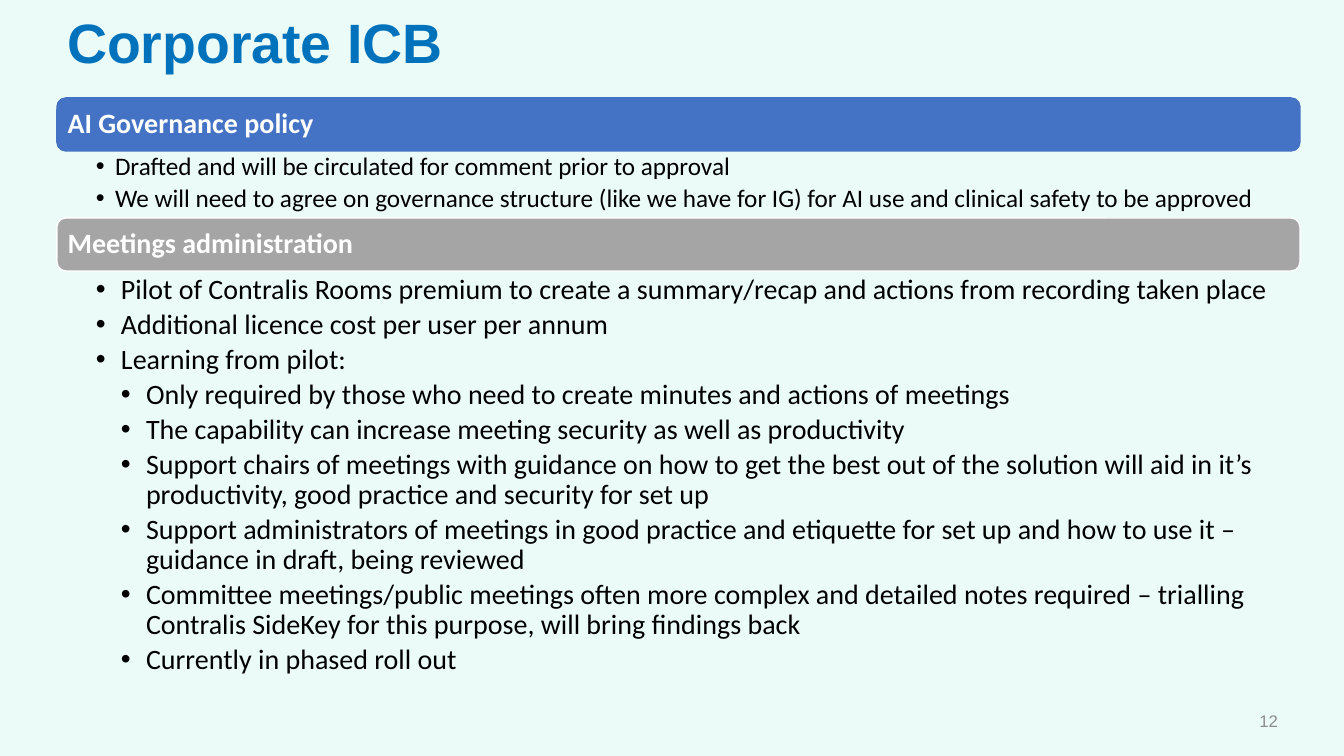
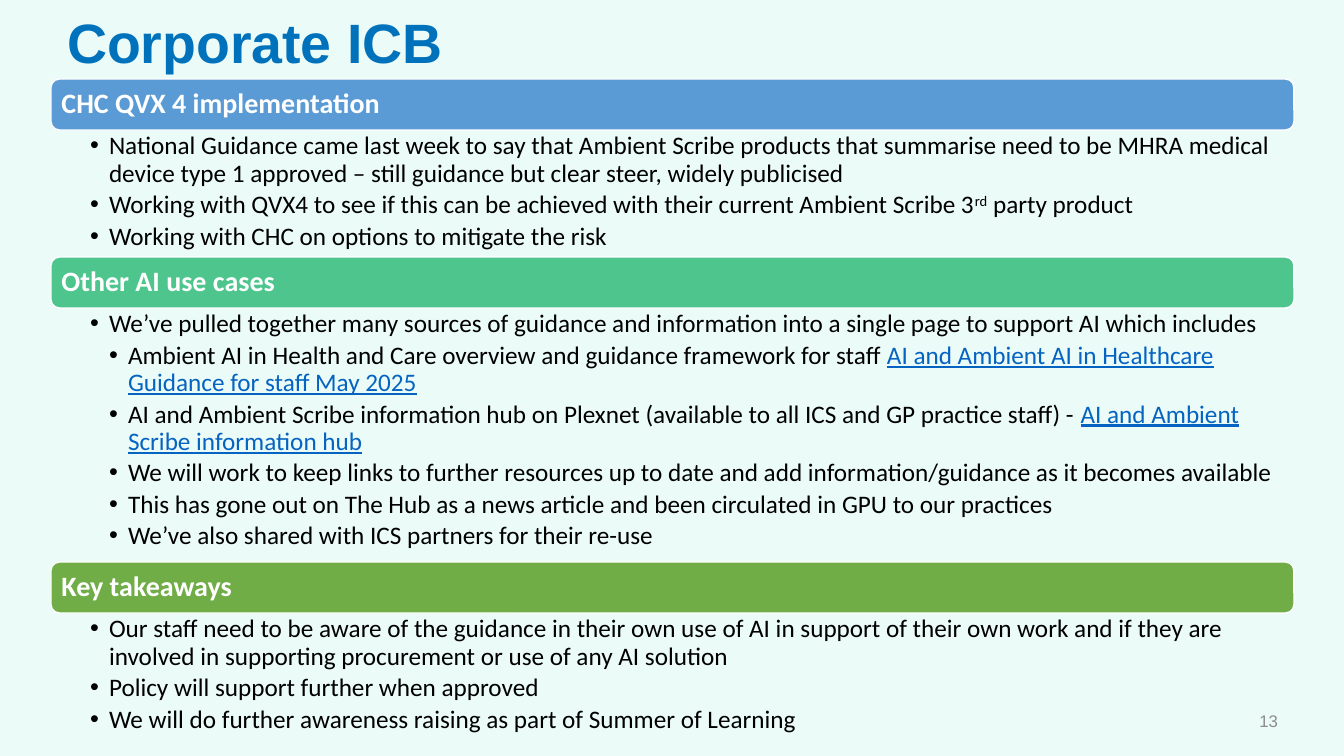
from dataclasses import dataclass

from lxml.etree import SubElement
from pptx import Presentation
from pptx.dml.color import RGBColor
from pptx.enum.shapes import MSO_SHAPE
from pptx.enum.text import MSO_ANCHOR, MSO_AUTO_SIZE, PP_ALIGN
from pptx.oxml.ns import qn
from pptx.util import Emu, Pt

# Scale and shared look
SLIDE_W, SLIDE_H = 1344, 756
EMU_PER_PX = 12192000 / SLIDE_W
BAND_W = 1243
LINE_SPACING = 0.9
GAP_RATIO = 0.17
COMPARISON_LAYOUT = 4

HEADING_FONT = "Arial"
BODY_FONT = "Calibri"

BACKGROUND = RGBColor(0xEB, 0xFB, 0xF8)
TITLE_BLUE = RGBColor(0x00, 0x72, 0xBC)
NUMBER_GREY = RGBColor(0x8C, 0x8C, 0x8C)
LINK_BLUE = RGBColor(0x05, 0x63, 0xC1)
BLACK = RGBColor(0x00, 0x00, 0x00)
WHITE = RGBColor(0xFF, 0xFF, 0xFF)
ROYAL = RGBColor(0x44, 0x72, 0xC4)
GREY = RGBColor(0xA5, 0xA5, 0xA5)
SKY = RGBColor(0x5B, 0x9B, 0xD5)
MINT = RGBColor(0x4D, 0xC5, 0x8D)
GREEN = RGBColor(0x70, 0xAD, 0x47)


@dataclass(frozen=True)
class Run:
    text: str
    link: bool = False
    superscript: bool = False


@dataclass(frozen=True)
class Bullet:
    runs: tuple[Run, ...]
    level: int = 0


@dataclass(frozen=True)
class ListStyle:
    size: int
    indent: int
    inset_y: int
    inset_right: int


@dataclass(frozen=True)
class Section:
    heading: str
    fill: RGBColor
    list_height: int
    bullets: tuple[Bullet, ...]
    line: RGBColor = WHITE
    style: ListStyle = ListStyle(18, 19, 3, 14)


@dataclass(frozen=True)
class Page:
    number: int
    left: int
    top: int
    band_height: int
    sections: tuple[Section, ...]


def item(text: str) -> Bullet:
    return Bullet((Run(text),))


def sub(text: str, link: str = "") -> Bullet:
    runs = (Run(text), Run(link, link=True)) if link else (Run(text),)
    return Bullet(runs, level=1)


# Content
PAGES = (
    Page(12, 57, 98, 53, (
        Section("AI Governance policy", ROYAL, 67, (
            item("Drafted and will be circulated for comment prior to approval"),
            item("We will need to agree on governance structure (like we have for IG) "
                 "for AI use and clinical safety to be approved"),
        ), line=ROYAL),
        Section("Meetings administration", GREY, 439, (
            item("Pilot of Contralis Rooms premium to create a summary/recap and "
                 "actions from recording taken place"),
            item("Additional licence cost per user per annum"),
            item("Learning from pilot:"),
            sub("Only required by those who need to create minutes and actions of meetings"),
            sub("The capability can increase meeting security as well as productivity"),
            sub("Support chairs of meetings with guidance on how to get the best out of "
                "the solution will aid in it’s productivity, good practice and security "
                "for set up"),
            sub("Support administrators of meetings in good practice and etiquette for "
                "set up and how to use it – guidance in draft, being reviewed"),
            sub("Committee meetings/public meetings often more complex and detailed notes "
                "required – trialling Contralis SideKey for this purpose, will bring "
                "findings back"),
            sub("Currently in phased roll out"),
        ), style=ListStyle(20, 25, 4, 20)),
    )),
    Page(13, 51, 79, 51, (
        Section("CHC QVX 4 implementation", SKY, 127, (
            item("National Guidance came last week to say that Ambient Scribe products "
                 "that summarise need to be MHRA medical device type 1 approved – still "
                 "guidance but clear steer, widely publicised"),
            Bullet((
                Run("Working with QVX4 to see if this can be achieved with their current "
                    "Ambient Scribe 3"),
                Run("rd", superscript=True),
                Run(" party product"),
            )),
            item("Working with CHC on options to mitigate the risk"),
        )),
        Section("Other AI use cases", MINT, 254, (
            item("We’ve pulled together many sources of guidance and information into a "
                 "single page to support AI which includes"),
            sub("Ambient AI in Health and Care overview and guidance framework for staff ",
                "AI and Ambient AI in Healthcare Guidance for staff May 2025"),
            sub("AI and Ambient Scribe information hub on Plexnet (available to all ICS "
                "and GP practice staff) - ", "AI and Ambient Scribe information hub"),
            sub("We will work to keep links to further resources up to date and add "
                "information/guidance as it becomes available"),
            sub("This has gone out on The Hub as a news article and been circulated in "
                "GPU to our practices"),
            sub("We’ve also shared with ICS partners for their re-use"),
        )),
        Section("Key takeaways", GREEN, 127, (
            item("Our staff need to be aware of the guidance in their own use of AI in "
                 "support of their own work and if they are involved in supporting "
                 "procurement or use of any AI solution"),
            item("Policy will support further when approved"),
            item("We will do further awareness raising as part of Summer of Learning"),
        )),
    )),
)


# Drawing helpers
def px(n: int) -> Emu:
    return Emu(round(n * EMU_PER_PX))


def place(sp, left: int, top: int, width: int, height: int) -> None:
    sp.left, sp.top, sp.width, sp.height = px(left), px(top), px(width), px(height)


def add_run(p, text: str, font: str, size: float, color: RGBColor, bold: bool = False):
    r = p.add_run()
    r.text = text
    r.font.name, r.font.size, r.font.bold = font, Pt(size), bold
    r.font.color.rgb = color
    return r


def set_frame(tf, anchor: MSO_ANCHOR) -> None:
    tf.word_wrap = True
    tf.auto_size = MSO_AUTO_SIZE.NONE
    tf.vertical_anchor = anchor


def add_title(s) -> None:
    sp = s.shapes.title
    place(sp, 57, 15, 1230, 62)
    set_frame(sp.text_frame, MSO_ANCHOR.MIDDLE)
    p = sp.text_frame.paragraphs[0]
    p.alignment = PP_ALIGN.LEFT
    p.line_spacing = LINE_SPACING
    add_run(p, "Corporate ICB", HEADING_FONT, 39.6, TITLE_BLUE, bold=True)


def add_number(s, number: int) -> None:
    sp = s.shapes.add_textbox(px(950), px(701), px(338), px(40))
    set_frame(sp.text_frame, MSO_ANCHOR.MIDDLE)
    p = sp.text_frame.paragraphs[0]
    p.alignment = PP_ALIGN.RIGHT
    add_run(p, str(number), HEADING_FONT, 12, NUMBER_GREY)


def add_band(s, section: Section, left: int, top: int, height: int) -> None:
    sp = s.shapes.add_shape(MSO_SHAPE.ROUNDED_RECTANGLE,
                            px(left), px(top), px(BAND_W), px(height))
    sp.shadow.inherit = False
    sp.fill.solid()
    sp.fill.fore_color.rgb = section.fill
    sp.line.color.rgb = section.line
    sp.line.width = Pt(1)
    tf = sp.text_frame
    set_frame(tf, MSO_ANCHOR.MIDDLE)
    tf.margin_left = tf.margin_right = px(8)
    p = tf.paragraphs[0]
    p.alignment = PP_ALIGN.LEFT
    p.line_spacing = LINE_SPACING
    add_run(p, section.heading, BODY_FONT, 20, WHITE, bold=True)


def add_bullet(p, bullet: Bullet, style: ListStyle) -> None:
    p.level = bullet.level
    p.alignment = PP_ALIGN.LEFT
    p.line_spacing = LINE_SPACING
    p.space_before = Pt(0)
    p.space_after = Pt(style.size * GAP_RATIO)
    pPr = p._p.get_or_add_pPr()
    pPr.set("marL", str(px(style.indent * (bullet.level + 1))))
    pPr.set("indent", str(-px(style.indent)))
    SubElement(pPr, qn("a:buChar")).set("char", "•")
    for run in bullet.runs:
        color = LINK_BLUE if run.link else BLACK
        r = add_run(p, run.text, BODY_FONT, style.size, color)
        if run.link:
            r.font.underline = True
        if run.superscript:
            r.font._element.set("baseline", "30000")


def fill_list(sp, section: Section, left: int, top: int) -> None:
    style = section.style
    place(sp, left, top, BAND_W, section.list_height)
    tf = sp.text_frame
    set_frame(tf, MSO_ANCHOR.TOP)
    tf.margin_left, tf.margin_right = px(39), px(style.inset_right)
    tf.margin_top = tf.margin_bottom = px(style.inset_y)
    for i, bullet in enumerate(section.bullets):
        p = tf.add_paragraph() if i else tf.paragraphs[0]
        add_bullet(p, bullet, style)


def add_page(prs, page: Page) -> None:
    s = prs.slides.add_slide(prs.slide_layouts[COMPARISON_LAYOUT])
    bodies = [sp for sp in s.placeholders if sp.placeholder_format.idx > 0]
    add_title(s)
    add_number(s, page.number)

    # Bands and lists stack downwards without gaps
    top = page.top
    for section, body in zip(page.sections, bodies):
        add_band(s, section, page.left, top, page.band_height)
        top += page.band_height
        fill_list(body, section, page.left, top)
        top += section.list_height

    for body in bodies[len(page.sections):]:
        body.element.getparent().remove(body.element)


def main() -> None:
    prs = Presentation()
    prs.slide_width, prs.slide_height = px(SLIDE_W), px(SLIDE_H)
    fill = prs.slide_master.background.fill
    fill.solid()
    fill.fore_color.rgb = BACKGROUND
    for page in PAGES:
        add_page(prs, page)
    prs.save("out.pptx")


if __name__ == "__main__":
    main()
